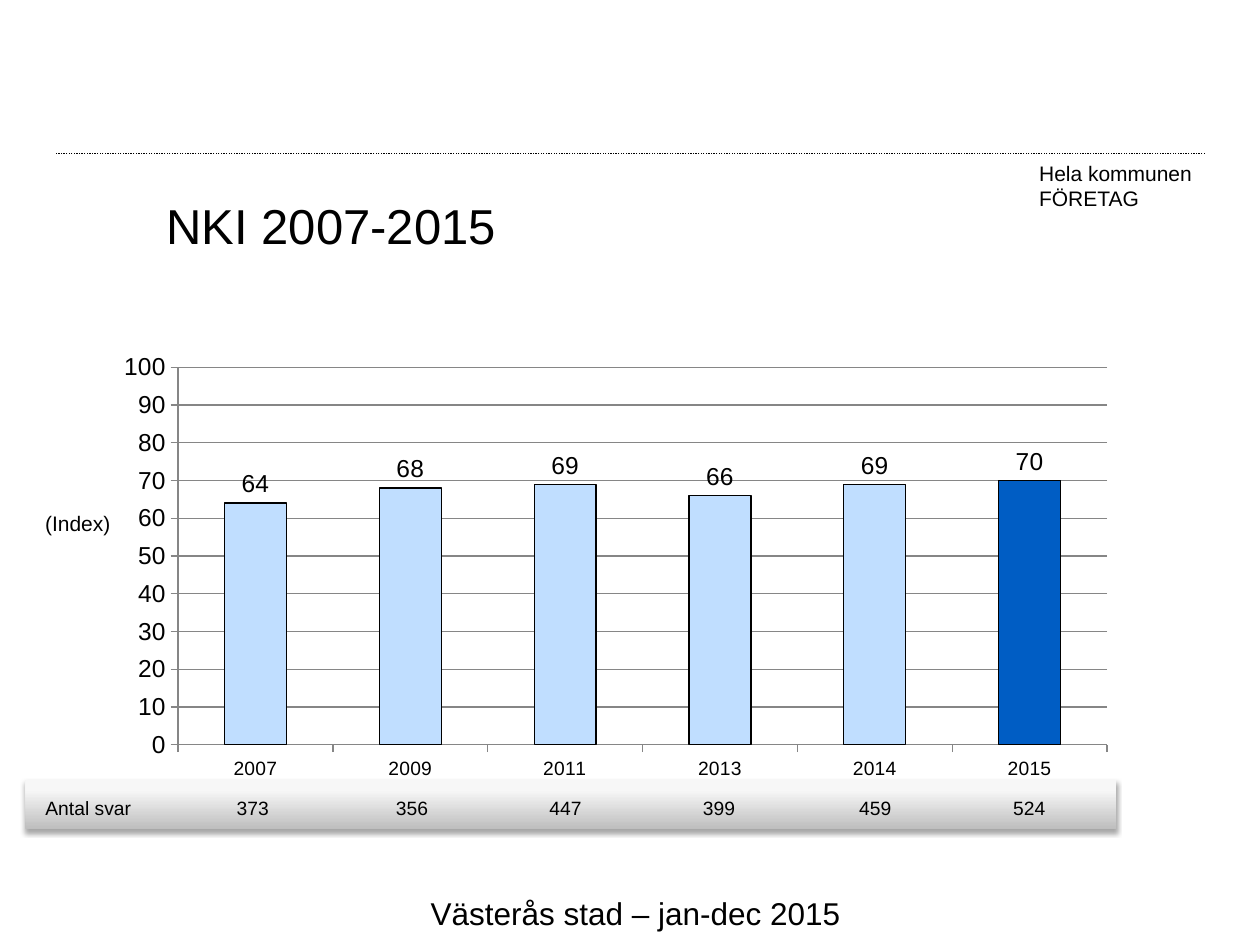
from lxml import etree
from pptx import Presentation
from pptx.chart.data import CategoryChartData
from pptx.dml.color import RGBColor
from pptx.enum.chart import XL_CHART_TYPE, XL_LABEL_POSITION, XL_TICK_MARK
from pptx.enum.dml import MSO_LINE
from pptx.enum.shapes import MSO_CONNECTOR, MSO_SHAPE
from pptx.enum.text import MSO_ANCHOR, MSO_AUTO_SIZE, PP_ALIGN
from pptx.oxml import parse_xml
from pptx.oxml.ns import nsdecls, qn
from pptx.util import Pt

COLUMNS = XL_CHART_TYPE.COLUMN_CLUSTERED
OUTSIDE_END = XL_LABEL_POSITION.OUTSIDE_END
TICK_OUT = XL_TICK_MARK.OUTSIDE
DOTTED = MSO_LINE.ROUND_DOT
STRAIGHT = MSO_CONNECTOR.STRAIGHT
RECTANGLE = MSO_SHAPE.RECTANGLE
MIDDLE = MSO_ANCHOR.MIDDLE
FIT_SHAPE = MSO_AUTO_SIZE.SHAPE_TO_FIT_TEXT
LEFT, CENTER = PP_ALIGN.LEFT, PP_ALIGN.CENTER
NO_STYLE = "{2D5ABB26-0587-4C30-8999-92F81FD0307C}"

BLACK, GRAY = "000000", "868686"
LIGHT_BLUE, BLUE = "C0DEFF", "005DC4"
YEARS = ["2007", "2009", "2011", "2013", "2014", "2015"]
INDEX = [64, 68, 69, 66, 69, 70]
ANSWERS = ["Antal svar", "373", "356", "447", "399", "459", "524"]


def rgb(value):
    return RGBColor.from_string(value)


def set_font(font, size):
    for name, value in {"name": "Arial", "size": Pt(size), "bold": False}.items():
        setattr(font, name, value)
    font.color.rgb = rgb(BLACK)


prs = Presentation()
prs.slide_width, prs.slide_height = Pt(720), Pt(540)
s = prs.slides.add_slide(prs.slide_layouts[5])

# Title
title = s.shapes.title
title.left, title.top, title.width, title.height = Pt(88), Pt(111.5), Pt(601), Pt(34)
tf = title.text_frame
tf.text = "NKI 2007-2015"
tf.vertical_anchor = MIDDLE
tf.paragraphs[0].alignment = LEFT
set_font(tf.paragraphs[0].font, 28)

# Dotted rule
rule = s.shapes.add_connector(STRAIGHT, Pt(688.5), Pt(87.75), Pt(31.5), Pt(87.75))
rule.line.color.rgb = rgb(BLACK)
rule.line.width = Pt(0.75)
rule.line.dash_style = DOTTED
etree.SubElement(rule._element.spPr, qn("a:effectLst"))

# Index chart
data = CategoryChartData(number_format="0")
data.categories = YEARS
data.add_series("Series 1", INDEX)
chart = s.shapes.add_chart(COLUMNS, Pt(59.75), Pt(191), Pt(584), Pt(255), data).chart
set_font(chart.font, 18)
chart.has_legend = chart.has_title = False
plot = chart.plots[0]
plot.gap_width = 150
plot.vary_by_categories = False

for axis, size in ((chart.category_axis, 11), (chart.value_axis, 14)):
    set_font(axis.tick_labels.font, size)
    axis.major_tick_mark = TICK_OUT
    axis.format.line.color.rgb = rgb(GRAY)
    axis.format.line.width = Pt(0.75)
axis = chart.value_axis
axis.minimum_scale, axis.maximum_scale, axis.major_unit = 0, 100, 10
axis.has_major_gridlines = True
axis.major_gridlines.format.line.color.rgb = rgb(GRAY)
axis.major_gridlines.format.line.width = Pt(0.75)

series = plot.series[0]
last = len(YEARS) - 1
for item, color in [(series, BLUE)] + [(series.points[i], LIGHT_BLUE) for i in range(last)]:
    item.format.fill.solid()
    item.format.fill.fore_color.rgb = rgb(color)
    item.format.line.color.rgb = rgb(BLACK)
    item.format.line.width = Pt(0.75)
labels = series.data_labels
labels.show_value = True
labels.position = OUTSIDE_END
set_font(labels.font, 14)

# Inner plot area as fractions of the chart
plot_area = chart._chartSpace.chart.plotArea
for old in plot_area.findall(qn("c:layout")):
    plot_area.remove(old)
parts = [("layoutTarget", "inner"), ("xMode", "edge"), ("yMode", "edge"),
         ("x", 0.072), ("y", 0.074), ("w", 0.909), ("h", 0.846)]
inner = "".join(f'<c:{tag} val="{val}"/>' for tag, val in parts)
plot_area.insert(0, parse_xml(
    f'<c:layout {nsdecls("c")}><c:manualLayout>{inner}</c:manualLayout></c:layout>'))

# Free text labels
for left, top, width, height, size, lines in (
    (239, 507.5, 250.5, 29, 18, ["Västerås stad – jan-dec 2015"]),
    (18.75, 288, 52, 21.5, 12, ["(Index)"]),
    (586.75, 88, 102, 36, 12, ["Hela kommunen", "FÖRETAG"]),
):
    tf = s.shapes.add_textbox(Pt(left), Pt(top), Pt(width), Pt(height)).text_frame
    tf.word_wrap = False
    tf.auto_size = FIT_SHAPE
    tf.text = "\n".join(lines)
    for p in tf.paragraphs:
        set_font(p.font, size)

# Shaded band behind the answer counts
band = s.shapes.add_shape(RECTANGLE, Pt(14.5), Pt(445.75), Pt(623.5), Pt(28))
band.line.fill.background()
band.fill.gradient()
band.fill.gradient_angle = 90
for stop, (position, color) in zip(band.fill.gradient_stops, ((0, "BEBEBE"), (0.8, "F7F7F7"))):
    stop.position = position
    stop.color.rgb = rgb(color)
band._element.spPr.append(parse_xml(
    f'<a:effectLst {nsdecls("a")}>'
    f'<a:outerShdw blurRad="{Pt(3.1)}" dist="{Pt(1.8)}" dir="5400000" rotWithShape="0">'
    '<a:srgbClr val="000000"><a:alpha val="35000"/></a:srgbClr>'
    '</a:outerShdw></a:effectLst>'))

# Answer counts
table = s.shapes.add_table(1, len(ANSWERS), Pt(18.75), Pt(452), Pt(613.5), Pt(20)).table
table.first_row = table.horz_banding = False
table._tbl.tblPr.find(qn("a:tableStyleId")).text = NO_STYLE
for i, (width, text) in enumerate(zip((80, 91.5, 90.5, 85, 90.5, 88, 88), ANSWERS)):
    table.columns[i].width = Pt(width)
    cell = table.cell(0, i)
    cell.fill.background()
    cell.vertical_anchor = MIDDLE
    cell.text = text
    p = cell.text_frame.paragraphs[0]
    p.alignment = CENTER if i else LEFT
    set_font(p.font, 11)

prs.save("out.pptx")
